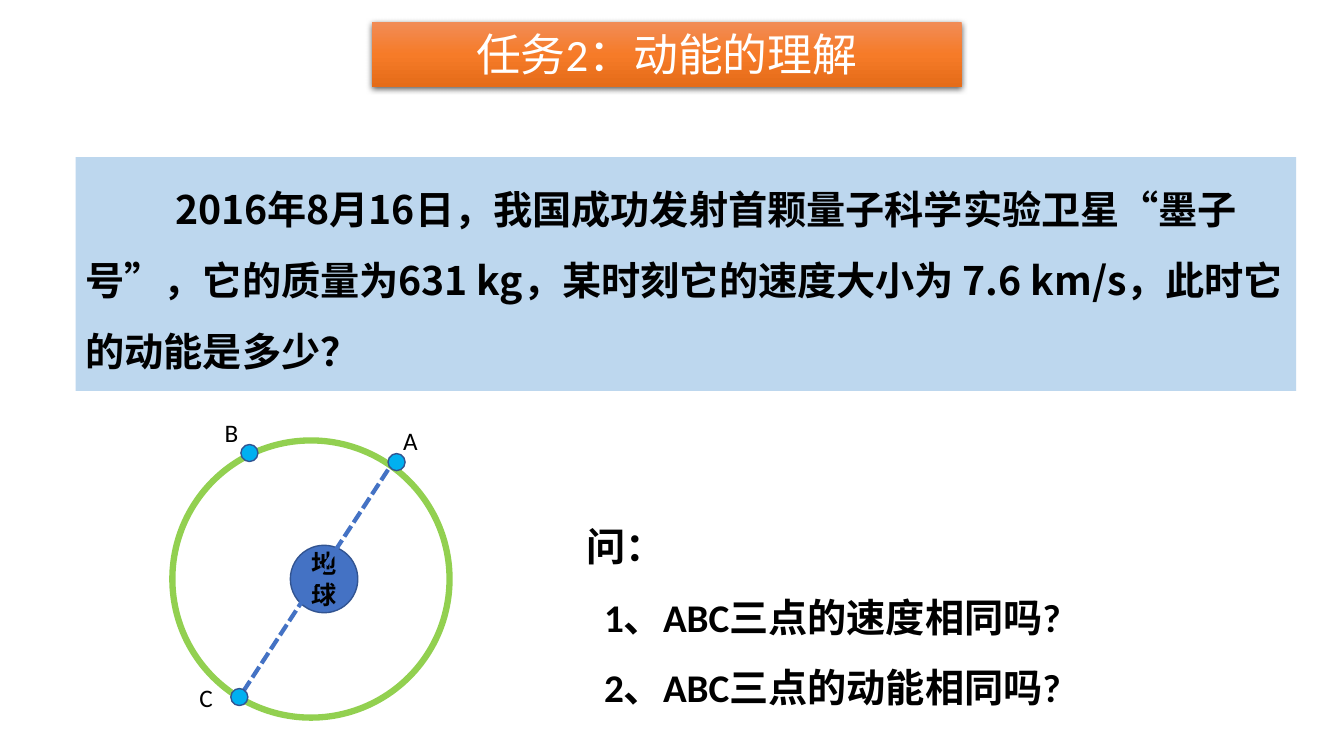
from lxml import etree
from pptx import Presentation
from pptx.dml.color import RGBColor
from pptx.enum.dml import MSO_LINE
from pptx.enum.shapes import MSO_CONNECTOR, MSO_SHAPE
from pptx.enum.text import MSO_ANCHOR, PP_ALIGN
from pptx.oxml import parse_xml
from pptx.oxml.ns import nsdecls, qn
from pptx.util import Pt

RECTANGLE, OVAL = MSO_SHAPE.RECTANGLE, MSO_SHAPE.OVAL
STRAIGHT, DASH = MSO_CONNECTOR.STRAIGHT, MSO_LINE.SQUARE_DOT
TOP, MIDDLE = MSO_ANCHOR.TOP, MSO_ANCHOR.MIDDLE
LEFT, CENTER = PP_ALIGN.LEFT, PP_ALIGN.CENTER

LATIN, CHINESE = "Calibri", "Noto Sans CJK SC"
COLORS = {
    "text": "000000", "white": "FFFFFF", "panel": "BDD7EE",
    "earth": "4472C4", "outline": "325491", "orbit": "92D050", "point": "00B0F0",
    "banner_top": "F18C57", "banner_middle": "F67B28", "banner_bottom": "E56C19",
}
POINT_SIZE = 12.2
POINTS = [
    ("A", 277.2, 324, 280.8, 300.2),
    ("B", 172.1, 317.5, 153.4, 294.5),
    ("C", 164.9, 491.8, 135.4, 483.8),
]


def color(name):
    """Return the named palette colour."""
    return RGBColor.from_string(COLORS[name])


def write_text(shape, lines, size=18, bold=False, ink="text", font=LATIN,
               align=LEFT, anchor=TOP, spacing=1.0, indents=(0,)):
    """Fill a shape with formatted paragraphs."""
    frame = shape.text_frame
    frame.word_wrap = True
    frame.vertical_anchor = anchor
    for number, (line, indent) in enumerate(zip(lines, indents)):
        paragraph = frame.add_paragraph() if number else frame.paragraphs[0]
        paragraph.alignment = align
        paragraph.line_spacing = spacing
        if indent:
            paragraph._p.get_or_add_pPr().set("indent", str(Pt(indent)))
        run = paragraph.add_run()
        run.text = line
        run.font.name = font
        run.font.size = Pt(size)
        run.font.bold = bold
        run.font.color.rgb = color(ink)
        east_asian = etree.SubElement(run._r.get_or_add_rPr(), qn("a:ea"))
        east_asian.set("typeface", CHINESE)


class SlideBuilder:
    """Holds the style and the shapes of the current slide."""

    def __init__(self, slide):
        """Start drawing on a slide."""
        self.slide = slide
        self.shapes = slide.shapes

    def start_group(self):
        """Send the following elements into a new group."""
        self.shapes = self.slide.shapes.add_group_shape().shapes

    def end_group(self):
        """Send the following elements to the slide again."""
        self.shapes = self.slide.shapes

    def shape(self, kind, left, top, width, height, fill=None, line=None, weight=1):
        """Add a preset shape."""
        shape = self.shapes.add_shape(kind, Pt(left), Pt(top), Pt(width), Pt(height))
        shape.shadow.inherit = False
        if fill:
            shape.fill.solid()
            shape.fill.fore_color.rgb = color(fill)
        else:
            shape.fill.background()
        if line:
            shape.line.color.rgb = color(line)
            shape.line.width = Pt(weight)
        else:
            shape.line.fill.background()
        return shape

    def banner(self, left, top, width, height):
        """Add a rectangle with a vertical gradient and a soft shadow."""
        shape = self.shape(RECTANGLE, left, top, width, height)
        names = ("banner_top", "banner_middle", "banner_bottom")
        stops = "".join(
            f'<a:gs pos="{number * 50000}"><a:srgbClr val="{COLORS[name]}"/></a:gs>'
            for number, name in enumerate(names))
        properties = shape._element.spPr
        properties.replace(properties.find(qn("a:noFill")), parse_xml(
            f'<a:gradFill {nsdecls("a")}><a:gsLst>{stops}</a:gsLst>'
            '<a:lin ang="5400000" scaled="0"/></a:gradFill>'))
        properties.find(qn("a:effectLst")).append(parse_xml(
            f'<a:outerShdw {nsdecls("a")} blurRad="{Pt(4.5)}" dist="{Pt(1.5)}" '
            'dir="5400000" algn="ctr" rotWithShape="0"><a:srgbClr val="000000">'
            '<a:alpha val="63000"/></a:srgbClr></a:outerShdw>'))
        return shape

    def dashed_line(self, start_x, start_y, end_x, end_y):
        """Add a straight dashed line."""
        line = self.shapes.add_connector(
            STRAIGHT, Pt(start_x), Pt(start_y), Pt(end_x), Pt(end_y))
        line.line.color.rgb = color("earth")
        line.line.width = Pt(3)
        line.line.dash_style = DASH
        etree.SubElement(line._element.spPr, qn("a:effectLst"))

    def text_box(self, left, top, width, height, lines, **text_format):
        """Add a text box."""
        box = self.shapes.add_textbox(Pt(left), Pt(top), Pt(width), Pt(height))
        write_text(box, lines, **text_format)


def main():
    """Build the kinetic energy slide."""
    presentation = Presentation()
    presentation.slide_width, presentation.slide_height = Pt(960), Pt(540)
    builder = SlideBuilder(presentation.slides.add_slide(presentation.slide_layouts[6]))

    panel = builder.shape(RECTANGLE, 54, 112.3, 871.9, 167, fill="panel")
    write_text(
        panel,
        ["2016年8月16日，我国成功发射首颗量子科学实验卫星“墨子号”，它的质量为631 kg，"
         "某时刻它的速度大小为 7.6 km/s，此时它的动能是多少？"],
        size=28, bold=True, font=CHINESE, spacing=1.5, indents=(64,))

    banner = builder.banner(265.7, 15.8, 421.2, 46.1)
    write_text(banner, ["任务2：动能的理解"], size=32, ink="white", align=CENTER)

    builder.start_group()
    earth = builder.shape(OVAL, 207.4, 389.5, 48.2, 48.2, fill="earth", line="outline")
    write_text(earth, ["地球"], bold=True, align=CENTER, anchor=MIDDLE)
    builder.shape(OVAL, 123.1, 314.6, 198, 198, line="orbit", weight=4.5)
    builder.dashed_line(277.2, 335.5, 171.4, 497.5)
    for name, left, top, label_left, label_top in POINTS:
        builder.shape(OVAL, left, top, POINT_SIZE, POINT_SIZE,
                      fill="point", line="outline")
        builder.text_box(label_left, label_top, 56.2, 28.8, [name])
    builder.end_group()

    builder.text_box(
        411.8, 352.8, 386.6, 159.8,
        ["问：", "1、ABC三点的速度相同吗?", "2、ABC三点的动能相同吗?"],
        size=28, bold=True, spacing=1.5, indents=(0, 12.6, 12.6))

    presentation.save("out.pptx")


if __name__ == "__main__":
    main()
